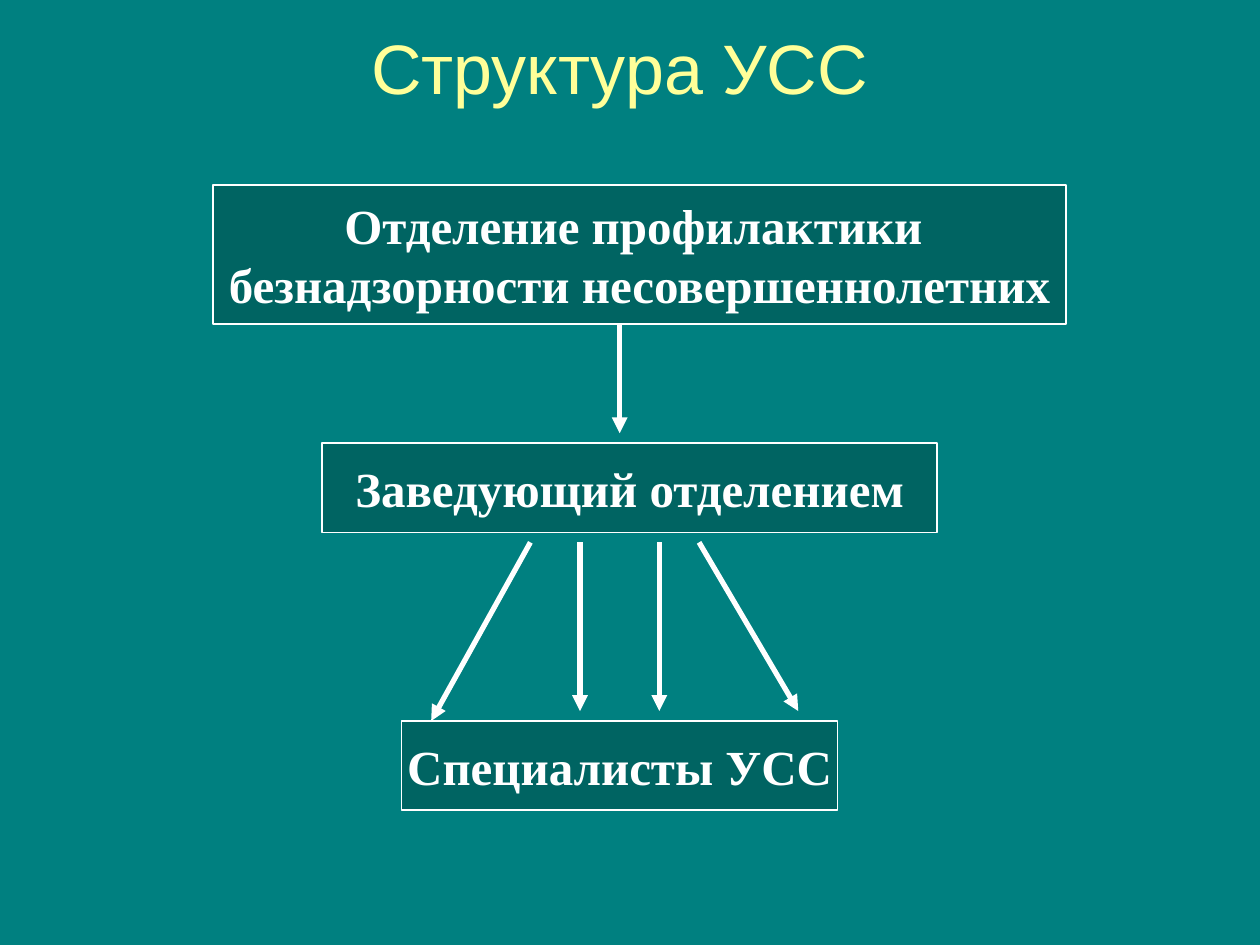
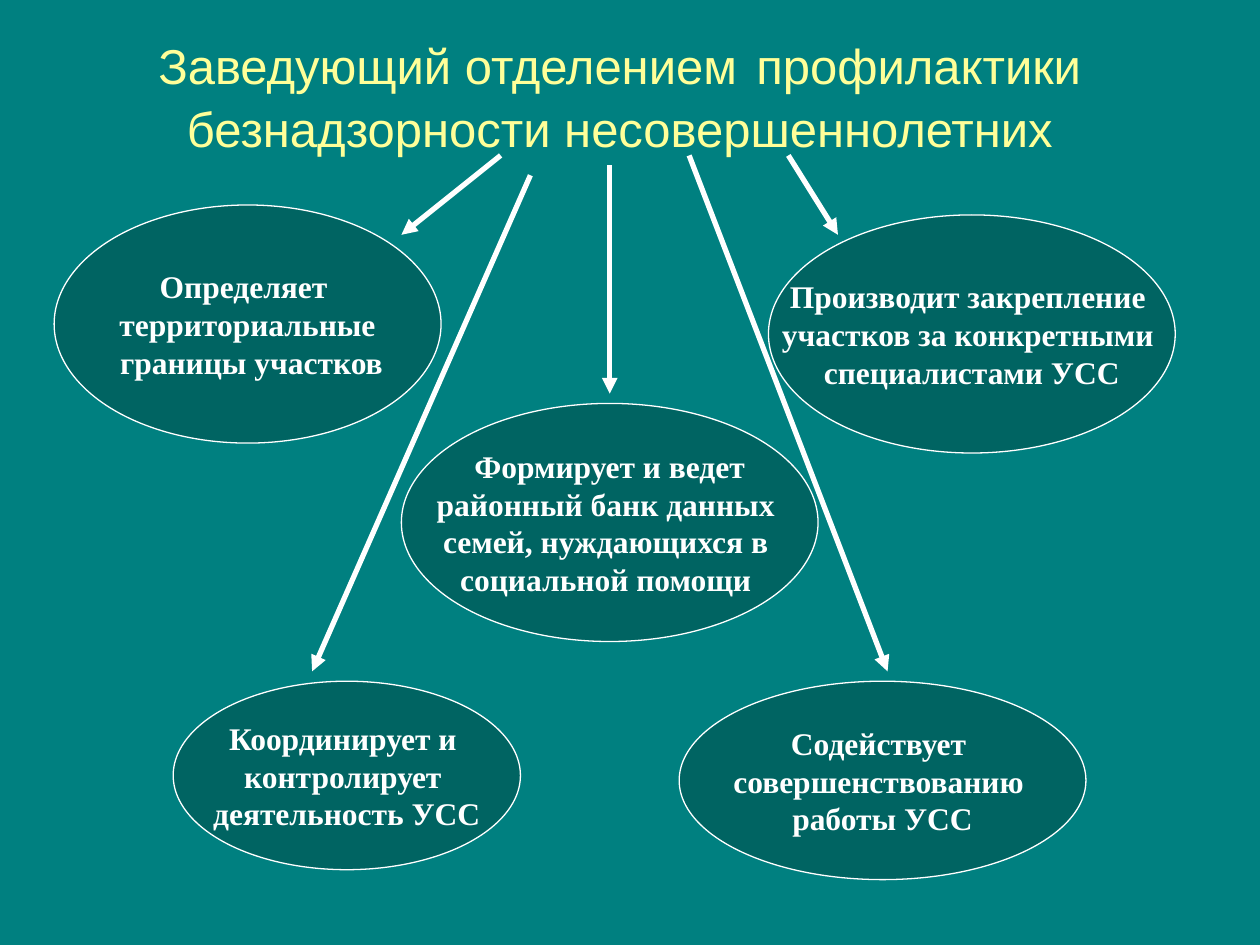
from dataclasses import dataclass

from lxml import etree
from pptx import Presentation
from pptx import util as u
from pptx.dml.color import RGBColor
from pptx.enum import shapes, text
from pptx.oxml.ns import qn


@dataclass(frozen=True)
class Theme:
    background: RGBColor = RGBColor.from_string("008080")
    panel: RGBColor = RGBColor.from_string("006462")
    title: RGBColor = RGBColor.from_string("FFFF99")
    white: RGBColor = RGBColor.from_string("FFFFFF")
    title_font: str = "Arial"
    body_font: str = "Times New Roman"
    title_size: int = 40
    heading_size: int = 28
    body_size: int = 18
    outline: float = 0.75
    arrow: float = 3


THEME = Theme()

# Square grid of 2 mm cells that starts at the title's top left corner
CELL = u.Mm(2)
LEFT, TOP = u.Inches(0.43), u.Inches(0.21)
TITLE_COLUMNS = 114


def point(column, row):
    return LEFT + column * CELL, TOP + row * CELL


def area(column, row, columns, rows):
    return *point(column, row), columns * CELL, rows * CELL


def write_text(frame, paragraphs, *, font, size, color, bold=False, wrap=True):
    """Each paragraph is a string or a list of (string, size) spans."""
    frame.auto_size = text.MSO_AUTO_SIZE.NONE
    frame.word_wrap = wrap
    frame.vertical_anchor = text.MSO_ANCHOR.MIDDLE
    for index, content in enumerate(paragraphs):
        para = frame.add_paragraph() if index else frame.paragraphs[0]
        para.alignment = text.PP_ALIGN.CENTER
        spans = [(content, size)] if isinstance(content, str) else content
        for words, points in spans:
            span = para.add_run()
            span.text = words
            span.font.name = font
            span.font.size = u.Pt(points)
            span.font.bold = bold
            span.font.color.rgb = color


def add_page(deck, title, rows):
    page = deck.slides.add_slide(deck.slide_layouts[5])
    box = page.shapes.title
    box.left, box.top, box.width, box.height = area(0, 0, TITLE_COLUMNS, rows)
    write_text(box.text_frame, [title], font=THEME.title_font,
               size=THEME.title_size, color=THEME.title)
    return page


def add_panel(page, kind, place, lines, size):
    box = page.shapes.add_shape(kind, *area(*place))
    box.shadow.inherit = False
    box.fill.solid()
    box.fill.fore_color.rgb = THEME.panel
    box.line.color.rgb = THEME.white
    box.line.width = u.Pt(THEME.outline)
    write_text(box.text_frame, lines, font=THEME.body_font, size=size,
               color=THEME.white, bold=True, wrap=False)


def add_arrow(page, start, end):
    arrow = page.shapes.add_connector(
        shapes.MSO_CONNECTOR.STRAIGHT, *point(*start), *point(*end))
    arrow.line.color.rgb = THEME.white
    arrow.line.width = u.Pt(THEME.arrow)
    properties = arrow.element.spPr
    etree.SubElement(properties.find(qn("a:ln")), qn("a:tailEnd"), type="triangle")
    etree.SubElement(properties, qn("a:effectLst"))


def add_diagram(page, kind, panels, arrows, size):
    for place, lines in panels:
        add_panel(page, kind, place, lines, size)
    for start, end in arrows:
        add_arrow(page, start, end)


def build_structure(deck):
    page = add_page(deck, "Структура УСС", rows=8)
    panels = [
        ((16, 16, 86, 14), ["Отделение профилактики ",
                            "безнадзорности несовершеннолетних"]),
        ((27, 42, 62, 9), ["Заведующий отделением"]),
        ((35, 70, 44, 9), ["Специалисты УСС"]),
    ]
    # One arrow to the head, then four from the head to the specialists
    arrows = [((57, 30), (57, 41))]
    arrows += [((start, 52), end) for start, end in (
        (48, (38, 70)), (53, (53, 69)), (61, (61, 69)), (65, (75, 69)))]
    add_diagram(page, shapes.MSO_SHAPE.RECTANGLE, panels, arrows, THEME.heading_size)


def build_head_duties(deck):
    title = [
        ("Заведующий отделением", THEME.heading_size),
        (" ", THEME.title_size),
        ("профилактики безнадзорности несовершеннолетних", THEME.heading_size),
    ]
    page = add_page(deck, title, rows=12)
    duties = [
        ((0, 18, 39, 24), ["Определяет ", "территориальные", " границы участков"]),
        ((35, 38, 42, 24), [" Формирует и ведет ", "районный банк данных ",
                            "семей, нуждающихся в ", "социальной помощи "]),
        ((72, 19, 41, 24), ["Производит закрепление ", "участков за конкретными ",
                            "специалистами УСС"]),
        ((12, 66, 35, 19), ["Координирует и ", "контролирует ", "деятельность УСС"]),
        ((63, 66, 41, 20), ["Содействует ", "совершенствованию ", "работы УСС"]),
    ]
    # Arrows fan out from the title to the duties
    arrows = [
        ((45, 13), (35, 21)),
        ((48, 15), (26, 65)),
        ((74, 13), (79, 21)),
        ((64, 13), (84, 65)),
        ((56, 14), (56, 37)),
    ]
    add_diagram(page, shapes.MSO_SHAPE.OVAL, duties, arrows, THEME.body_size)


def main():
    deck = Presentation()
    deck.slide_width, deck.slide_height = u.Inches(10), u.Inches(7.5)
    # Shared background on the master
    fill = deck.slide_master.background.fill
    fill.solid()
    fill.fore_color.rgb = THEME.background
    build_structure(deck)
    build_head_duties(deck)
    deck.save("out.pptx")


if __name__ == "__main__":
    main()
